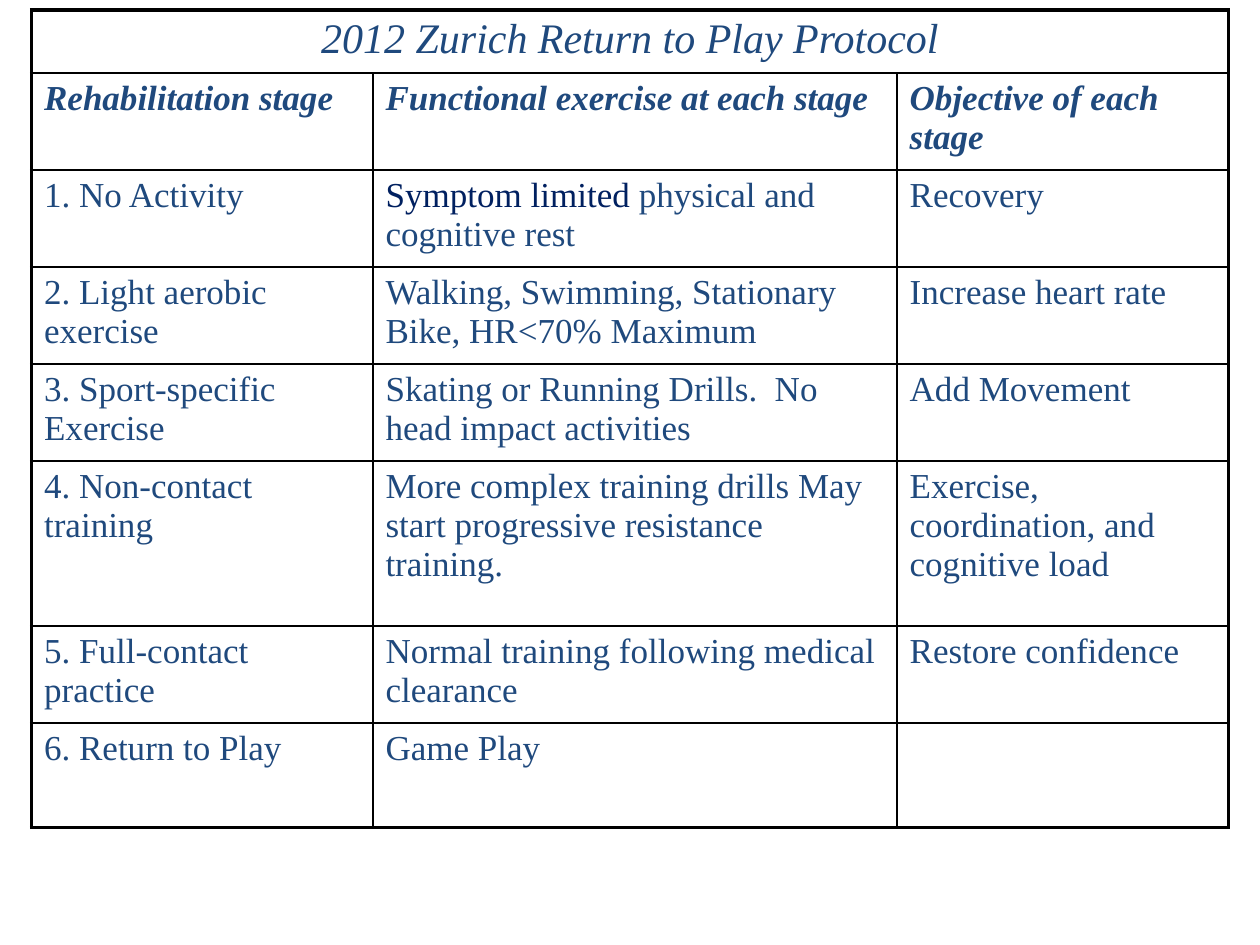
"""Build a slide with the 2012 Zurich Return to Play Protocol table."""
from lxml.etree import SubElement
from pptx import Presentation
from pptx.dml.color import RGBColor as Color
from pptx.enum.text import PP_ALIGN as Align
from pptx.oxml.ns import qn
from pptx.util import Inches, Pt

COLORS = {"text": "1F497D", "accent": "002060", "border": "000000"}
FONT = "Times New Roman"
TITLE = "2012 Zurich Return to Play Protocol"
ACCENT = "Symptom limited "
COLUMN_WIDTHS = [2.71, 4.16, 2.63]
ROW_HEIGHTS = [0.5, 0.77, 0.77, 0.77, 0.77, 1.31, 0.77, 0.83]
ROWS = [
    (TITLE, "", ""),
    ("Rehabilitation stage", "Functional exercise at each stage", "Objective of each stage"),
    ("1. No Activity", ACCENT + "physical and cognitive rest", "Recovery"),
    ("2. Light aerobic exercise", "Walking, Swimming, Stationary Bike, HR<70% Maximum",
     "Increase heart rate"),
    ("3. Sport-specific Exercise", "Skating or Running Drills.  No head impact activities",
     "Add Movement"),
    ("4. Non-contact training",
     "More complex training drills May start progressive resistance training.",
     "Exercise, coordination, and cognitive load"),
    ("5. Full-contact practice", "Normal training following medical clearance",
     "Restore confidence"),
    ("6. Return to Play", "Game Play", ""),
]
THIN, THICK = 1, 2.25


def set_borders(cell, row, column):
    outer = {
        "a:lnL": column == 0,
        "a:lnR": column == len(COLUMN_WIDTHS) - 1 or row == 0,
        "a:lnT": row == 0,
        "a:lnB": row == len(ROWS) - 1,
    }
    properties = cell._tc.get_or_add_tcPr()
    for tag, is_outer in outer.items():
        line = SubElement(properties, qn(tag), w=str(Pt(THICK if is_outer else THIN)))
        fill = SubElement(line, qn("a:solidFill"))
        SubElement(fill, qn("a:srgbClr"), val=COLORS["border"])


def add_span(para, text, color, row):
    span = para.add_run()
    span.text = text
    span.font.name = FONT
    span.font.size = Pt(24 if row == 0 else 20)
    span.font.bold = row == 1
    span.font.italic = row <= 1
    span.font.color.rgb = Color.from_string(COLORS[color])


def fill_cell(cell, text, row, column):
    set_borders(cell, row, column)
    cell.fill.background()
    para = cell.text_frame.paragraphs[0]
    para.alignment = Align.CENTER if row == 0 else Align.LEFT
    if text.startswith(ACCENT):
        add_span(para, ACCENT, "accent", row)
        text = text.removeprefix(ACCENT)
    if text:
        add_span(para, text, "text", row)


def add_protocol_table(page):
    frame = page.shapes.add_table(
        len(ROWS), len(COLUMN_WIDTHS), Inches(0.25), Inches(0.08),
        Inches(sum(COLUMN_WIDTHS)), Inches(sum(ROW_HEIGHTS)))
    table = frame.table
    table.first_row = False
    table.horz_banding = False
    for column, width in zip(table.columns, COLUMN_WIDTHS):
        column.width = Inches(width)
    for row, height in zip(table.rows, ROW_HEIGHTS):
        row.height = Inches(height)
    table.cell(0, 0).merge(table.cell(0, len(COLUMN_WIDTHS) - 1))
    for row, texts in enumerate(ROWS):
        for column, text in enumerate(texts):
            fill_cell(table.cell(row, column), text, row, column)


def main():
    deck = Presentation()
    deck.slide_width, deck.slide_height = Inches(10), Inches(7.5)
    page = deck.slides.add_slide(deck.slide_layouts[6])
    add_protocol_table(page)
    deck.save("out.pptx")


if __name__ == "__main__":
    main()
